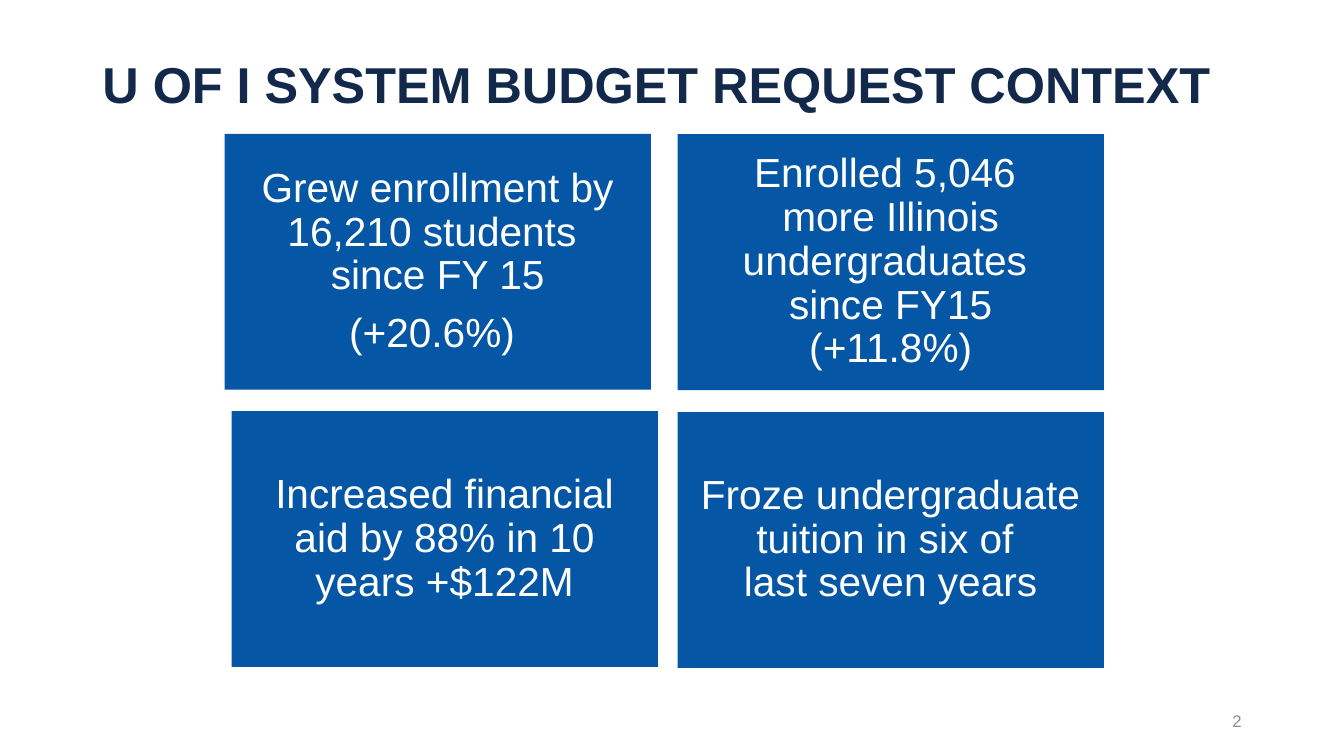
"""Build the budget request context slide."""
from dataclasses import dataclass

from pptx import Presentation
from pptx.dml.color import RGBColor
from pptx.enum.shapes import MSO_SHAPE
from pptx.enum.text import MSO_ANCHOR, MSO_AUTO_SIZE, PP_ALIGN
from pptx.util import Pt


@dataclass(frozen=True)
class Theme:
    font: str = "Arial"
    navy: str = "13294B"
    blue: str = "0556A5"
    white: str = "FFFFFF"
    gray: str = "8C8C8C"
    title_size: float = 36
    card_size: float = 29
    number_size: float = 12


class SlideBuilder:
    def __init__(self, slide, theme):
        self.slide = slide
        self.theme = theme

    def set_text(self, text_frame, text, size, color, alignment, bold=False, line_spacing=0.9):
        text_frame.text = text
        text_frame.word_wrap = True
        text_frame.auto_size = MSO_AUTO_SIZE.NONE
        text_frame.vertical_anchor = MSO_ANCHOR.MIDDLE
        for paragraph in text_frame.paragraphs:
            paragraph.alignment = alignment
            paragraph.line_spacing = line_spacing
            for run in paragraph.runs:
                run.font.name = self.theme.font
                run.font.size = Pt(size)
                run.font.bold = bold
                run.font.color.rgb = RGBColor.from_string(color)

    def title(self, text, left, top, width, height):
        title = self.slide.shapes.title
        title.left, title.top = Pt(left), Pt(top)
        title.width, title.height = Pt(width), Pt(height)
        self.set_text(title.text_frame, text, self.theme.title_size, self.theme.navy,
                      PP_ALIGN.LEFT, bold=True)

    def card(self, text, left, top, width, height, gap=0, inset=8.6):
        shape = self.slide.shapes.add_shape(
            MSO_SHAPE.RECTANGLE, Pt(left), Pt(top), Pt(width), Pt(height))
        shape.shadow.inherit = False
        shape.fill.solid()
        shape.fill.fore_color.rgb = RGBColor.from_string(self.theme.blue)
        shape.line.fill.background()
        text_frame = shape.text_frame
        text_frame.margin_left = text_frame.margin_right = Pt(inset)
        text_frame.margin_top = text_frame.margin_bottom = Pt(inset)
        self.set_text(text_frame, text, self.theme.card_size, self.theme.white, PP_ALIGN.CENTER)
        for paragraph in text_frame.paragraphs[1:]:
            paragraph.space_before = Pt(gap)

    def page_number(self, text, left, top, width, height):
        box = self.slide.shapes.add_textbox(Pt(left), Pt(top), Pt(width), Pt(height))
        self.set_text(box.text_frame, text, self.theme.number_size, self.theme.gray,
                      PP_ALIGN.RIGHT, line_spacing=1.0)


def main():
    presentation = Presentation()
    presentation.slide_width, presentation.slide_height = Pt(960), Pt(540)
    slide = presentation.slides.add_slide(presentation.slide_layouts[5])
    builder = SlideBuilder(slide, Theme())

    builder.title("U OF I SYSTEM BUDGET REQUEST CONTEXT", 66, 28.8, 828, 67)
    cards = [
        ("Grew enrollment by 16,210 students \vsince FY 15\n(+20.6%) ", 160.4, 95.6, 10),
        ("Enrolled 5,046 \nmore Illinois undergraduates \vsince FY15\v(+11.8%)", 484, 95.8, 0),
        ("Increased financial aid by 88% in 10 years +$122M", 165.4, 293.6, 0),
        ("Froze undergraduate tuition in six of \vlast seven years", 484, 294.3, 0),
    ]
    for text, left, top, gap in cards:
        builder.card(text, left, top, 304.6, 182.8, gap)
    builder.page_number("2", 678, 500.5, 216, 28.8)

    presentation.save("out.pptx")


if __name__ == "__main__":
    main()
